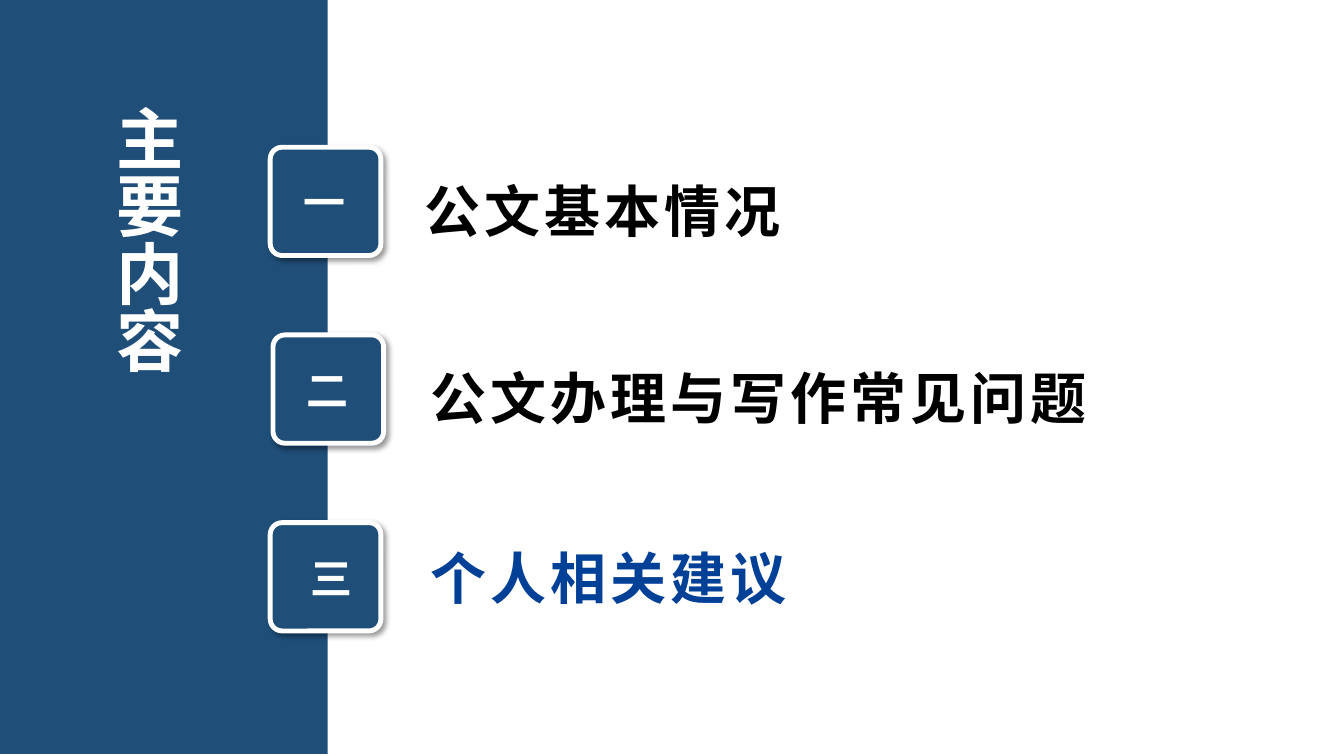
import pptx
import pptx.util
import pptx.dml.color
import pptx.enum.shapes
import pptx.enum.text
import pptx.oxml
import pptx.oxml.ns
from pptx.util import Cm, Pt

NAVY, BLUE, BLACK, WHITE = "1F4E79", "004097", "000000", "FFFFFF"
SANS, SERIF = "Noto Sans CJK SC", "Times New Roman"
SHAPE = pptx.enum.shapes.MSO_SHAPE
ALIGN = pptx.enum.text.PP_ALIGN
FIRST, STEP = 3.71, 4.73  # top of the first box and distance to the next, cm

# number, title, title colour, then left of box, number and title, top of title
ITEMS = [
    ("一", "公文基本情况", BLACK, 6.81, 6.68, 10.44, 4.32),
    ("二", "公文办理与写作常见问题", BLACK, 6.88, 6.76, 10.59, 9.04),
    ("三", "个人相关建议", BLUE, 6.81, 6.86, 10.59, 13.56),
]


def color(code):
    return pptx.dml.color.RGBColor.from_string(code)


def add_block(slide, kind, left, top, width, height):
    block = slide.shapes.add_shape(kind, Cm(left), Cm(top), Cm(width), Cm(height))
    block.fill.solid()
    block.fill.fore_color.rgb = color(NAVY)
    block.line.fill.background()
    block.shadow.inherit = False
    return block


def add_shadow(shape):
    """Give the shape a soft shadow to the lower right."""
    effects = shape._element.spPr.find(pptx.oxml.ns.qn("a:effectLst"))
    effects.append(pptx.oxml.parse_xml(
        f'<a:outerShdw {pptx.oxml.ns.nsdecls("a")} blurRad="{Pt(4)}" '
        f'dist="{Pt(3)}" dir="2700000" algn="tl" rotWithShape="0">'
        '<a:srgbClr val="000000"><a:alpha val="40000"/></a:srgbClr>'
        '</a:outerShdw>'))


def add_box(slide, left, top):
    box = add_block(slide, SHAPE.ROUNDED_RECTANGLE, left, top, 2.79, 2.73)
    box.adjustments[0] = 0.11
    box.line.color.rgb = color(WHITE)
    box.line.width = Pt(3.5)
    add_shadow(box)


def add_text(slide, text, left, top, width, height, size, code,
             font=SERIF, align=ALIGN.LEFT, gap=0):
    """Add bold text; gap is the letter spacing in points."""
    label = slide.shapes.add_textbox(Cm(left), Cm(top), Cm(width), Cm(height))
    frame = label.text_frame
    frame.text = text
    frame.word_wrap = True
    frame.auto_size = pptx.enum.text.MSO_AUTO_SIZE.SHAPE_TO_FIT_TEXT
    para = frame.paragraphs[0]
    para.alignment = align
    run = para.runs[0]
    run.font.size = Pt(size)
    run.font.bold = True
    run.font.color.rgb = color(code)
    run.font.name = font
    props = run._r.get_or_add_rPr()
    props.append(pptx.oxml.parse_xml(
        f'<a:ea {pptx.oxml.ns.nsdecls("a")} typeface="{SANS}"/>'))
    if gap:
        props.set("spc", str(gap * 100))
    return label


def add_title(slide):
    title = add_text(slide, "主要内容", 2.29, 2.41, 2.57, 13.28, 48, WHITE,
                     font=SANS, align=ALIGN.JUSTIFY)
    title.text_frame._txBody.bodyPr.set("vert", "eaVert")


def add_item(slide, row, item):
    number, text, code, box_left, num_left, text_left, text_top = item
    top = FIRST + row * STEP
    add_box(slide, box_left, top)
    add_text(slide, number, num_left, top + 0.62, 3, 1.55, 30, WHITE,
             align=ALIGN.CENTER)
    add_text(slide, text, text_left, text_top, 22, 1.96, 40, code, gap=3)


def main():
    deck = pptx.Presentation()
    deck.slide_width, deck.slide_height = Cm(33.87), Cm(19.05)
    slide = deck.slides.add_slide(deck.slide_layouts[6])
    add_block(slide, SHAPE.RECTANGLE, 0, -0.05, 8.26, 19.05)
    add_title(slide)
    for row, item in enumerate(ITEMS):
        add_item(slide, row, item)
    deck.save("out.pptx")


if __name__ == "__main__":
    main()
